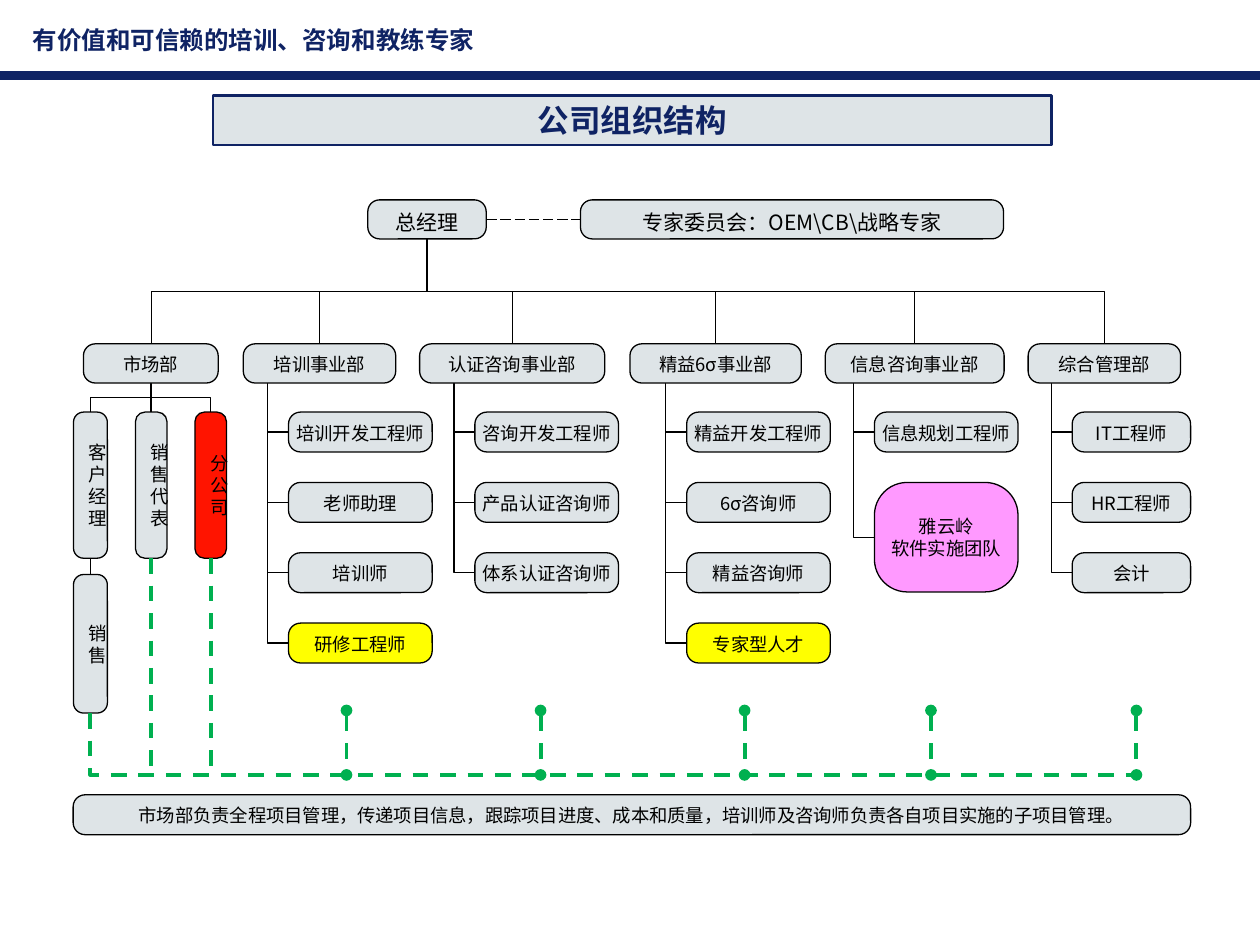
"""Build the company organisation chart slide."""
from dataclasses import dataclass

from lxml.etree import SubElement
from pptx import Presentation
from pptx.dml.color import RGBColor
from pptx.enum.dml import MSO_LINE
from pptx.enum.shapes import MSO_CONNECTOR, MSO_SHAPE
from pptx.enum.text import MSO_ANCHOR, MSO_AUTO_SIZE, PP_ALIGN
from pptx.oxml.ns import qn
from pptx.util import Pt


@dataclass(frozen=True)
class Theme:
    navy: RGBColor = RGBColor.from_string("0F2364")
    grey: RGBColor = RGBColor.from_string("DEE4E7")
    black: RGBColor = RGBColor.from_string("000000")
    red: RGBColor = RGBColor.from_string("FF1400")
    yellow: RGBColor = RGBColor.from_string("FFFF00")
    pink: RGBColor = RGBColor.from_string("FF99FF")
    green: RGBColor = RGBColor.from_string("00B050")
    font: str = "Noto Sans CJK SC"
    banner_font: str = "Arial"
    title_size: float = 18
    banner_size: float = 14
    top_size: float = 12
    body_size: float = 10.5
    hairline: float = 0.75
    project_line: float = 2.25


theme = Theme()


def write(shape, text, size=theme.body_size, color=theme.black, bold=False,
          font=theme.font, align=PP_ALIGN.CENTER, anchor=MSO_ANCHOR.TOP, wrap=False):
    frame = shape.text_frame
    frame.auto_size = MSO_AUTO_SIZE.NONE
    frame.word_wrap = wrap
    frame.vertical_anchor = anchor
    for index, line in enumerate(text.split("\n")):
        paragraph = frame.add_paragraph() if index else frame.paragraphs[0]
        paragraph.alignment = align
        run = paragraph.add_run()
        run.text = line
        run.font.size = Pt(size)
        run.font.bold = bold
        run.font.color.rgb = color
        run.font.name = font
        SubElement(run._r.get_or_add_rPr(), qn("a:ea"), typeface=theme.font)


def connect(start, end, bend=None, color=theme.black, width=theme.hairline,
            dash=None, dots=False):
    (x1, y1), (x2, y2) = start, end
    if bend:
        drop, reach = y2 - y1, abs(x2 - x1)
        left, top = (x1 + x2 - drop) / 2, (y1 + y2 - reach) / 2
        x1, y1, x2, y2 = left, top, left + drop, top + reach
    kind = MSO_CONNECTOR.ELBOW if bend else MSO_CONNECTOR.STRAIGHT
    line = slide.shapes.add_connector(kind, Pt(x1), Pt(y1), Pt(x2), Pt(y2))
    properties = line._element.spPr
    if bend:
        rightward = end[0] >= start[0]
        frame = properties.find(qn("a:xfrm"))
        frame.set("rot", "16200000" if rightward else "5400000")
        if rightward:
            frame.set("flipH", "1")
        properties.find(qn("a:prstGeom")).set("prst", bend)
    line.line.color.rgb = color
    line.line.width = Pt(width)
    if dash:
        line.line.dash_style = dash
    if dots:
        for tip in ("a:headEnd", "a:tailEnd"):
            SubElement(line.line._get_or_add_ln(), qn(tip), type="oval")
    SubElement(properties, qn("a:effectLst"))


deck = Presentation()
deck.slide_width, deck.slide_height = Pt(720), Pt(540)
slide = deck.slides.add_slide(deck.slide_layouts[5])

connect((0, 43), (720, 43), color=theme.navy, width=5)
slogan = slide.shapes.add_textbox(Pt(11.5), Pt(10.8), Pt(269.3), Pt(24.5))
write(slogan, "有价值和可信赖的培训、咨询和教练专家", size=theme.banner_size,
      color=theme.navy, bold=True, font=theme.banner_font, align=PP_ALIGN.LEFT)

title = slide.shapes.title
title.left, title.top, title.width, title.height = Pt(121.7), Pt(54.6), Pt(479.3), Pt(28.3)
outline = SubElement(title._element.spPr, qn("a:prstGeom"), prst="roundRect")
SubElement(SubElement(outline, qn("a:avLst")), qn("a:gd"), name="adj", fmla="val 16700")
title.fill.solid()
title.fill.fore_color.rgb = theme.grey
title.line.color.rgb = theme.navy
title.line.width = Pt(1.5)
write(title, "公司组织结构", size=theme.title_size, color=theme.navy, bold=True,
      anchor=MSO_ANCHOR.MIDDLE)

HEAD_TOP, HEAD_HEIGHT = 196.5, 22.4
HEAD_BOTTOM = HEAD_TOP + HEAD_HEIGHT
STAFF_TOP, STAFF_HEIGHT, STAFF_STEP = 235.5, 22.8, 40.2
SPINE_GAP = 12
MANAGER = (243.9, 136.5)
MARKET_X = 86.4
PROJECT_TOP, PROJECT_Y = 406, 442.8
SALES_BOTTOM = 407.5

departments = [
    ("培训事业部", 139, 87.1, 164.9, 82.1, 198,
     ["培训开发工程师", "老师助理", "培训师", "研修工程师"]),
    ("认证咨询事业部", 239.8, 105.8, 271.4, 82.1, 308.9,
     ["咨询开发工程师", "产品认证咨询师", "体系认证咨询师"]),
    ("精益6σ事业部", 360, 97.9, 392.4, 82.1, 425.5,
     ["精益开发工程师", "6σ咨询师", "精益咨询师", "专家型人才"]),
    ("信息咨询事业部", 471.6, 102.2, 499.7, 82.1, 532,
     ["信息规划工程师", "雅云岭\n软件实施团队"]),
    ("综合管理部", 587.5, 87.1, 612.7, 67.7, 649.4,
     ["IT工程师", "HR工程师", "会计"]),
]
market_roles = [
    ("客户经理", 51.7, 19.4, theme.grey),
    ("销售代表", MARKET_X, 18, theme.grey),
    ("分公司", 120.4, 18, theme.red),
]
special_fills = {"研修工程师": theme.yellow, "专家型人才": theme.yellow,
                 "雅云岭\n软件实施团队": theme.pink}

boxes = [
    ("总经理", 210.2, 114.2, 67.7, 22.3, theme.grey, {"size": theme.top_size}),
    ("专家委员会：OEM\\CB\\战略专家", 331.7, 114.2, 241.8, 22.3, theme.grey,
     {"size": theme.top_size}),
    ("市场部", 47.7, HEAD_TOP, 77, HEAD_HEIGHT, theme.grey, {}),
    ("市场部负责全程项目管理，传递项目信息，跟踪项目进度、成本和质量，培训师及咨询师负责各自项目实施的子项目管理。",
     41.8, 454.2, 638.6, 22.8, theme.grey, {}),
]
connect((277.9, 125.4), (331.7, 125.4), dash=MSO_LINE.LONG_DASH)
connect(MANAGER, (MARKET_X, HEAD_TOP), "bentConnector3")

narrow = {"wrap": True, "anchor": MSO_ANCHOR.MIDDLE}
for role, center, width, fill in market_roles:
    boxes.append((role, center - width / 2, STAFF_TOP, width, 83.5, fill, narrow))
    connect((MARKET_X, HEAD_BOTTOM), (center, STAFF_TOP), "bentConnector3")
account_x = market_roles[0][1]
boxes.append(("销售", account_x - 9.7, 328.3, 19.4, 79.2, theme.grey, narrow))
connect((account_x, 319), (account_x, 328.3))

for name, left, width, staff_left, staff_width, project_x, staff in departments:
    boxes.append((name, left, HEAD_TOP, width, HEAD_HEIGHT, theme.grey, {}))
    connect(MANAGER, (left + width / 2, HEAD_TOP), "bentConnector3")
    for row, role in enumerate(staff):
        top = STAFF_TOP + row * STAFF_STEP
        team = "\n" in role
        height = 62.6 if team else STAFF_HEIGHT
        boxes.append((role, staff_left, top, staff_width, height,
                      special_fills.get(role, theme.grey),
                      {"anchor": MSO_ANCHOR.MIDDLE} if team else {}))
        connect((staff_left - SPINE_GAP, HEAD_BOTTOM), (staff_left, top + height / 2),
                "bentConnector2")

for text, left, top, width, height, fill, text_format in boxes:
    box = slide.shapes.add_shape(MSO_SHAPE.ROUNDED_RECTANGLE,
                                 Pt(left), Pt(top), Pt(width), Pt(height))
    box.adjustments[0] = 0.3
    box.shadow.inherit = False
    box.fill.solid()
    box.fill.fore_color.rgb = fill
    box.line.color.rgb = theme.black
    box.line.width = Pt(theme.hairline)
    write(box, text, **text_format)

project = {"color": theme.green, "width": theme.project_line, "dash": MSO_LINE.DASH}
connect((account_x, SALES_BOTTOM), (departments[-1][5], PROJECT_Y), "bentConnector2", **project)
for _, center, _, _ in market_roles[1:]:
    connect((center, 319), (center, PROJECT_Y), **project)
for department in departments:
    connect((department[5], PROJECT_TOP), (department[5], PROJECT_Y), dots=True, **project)

deck.save("out.pptx")
